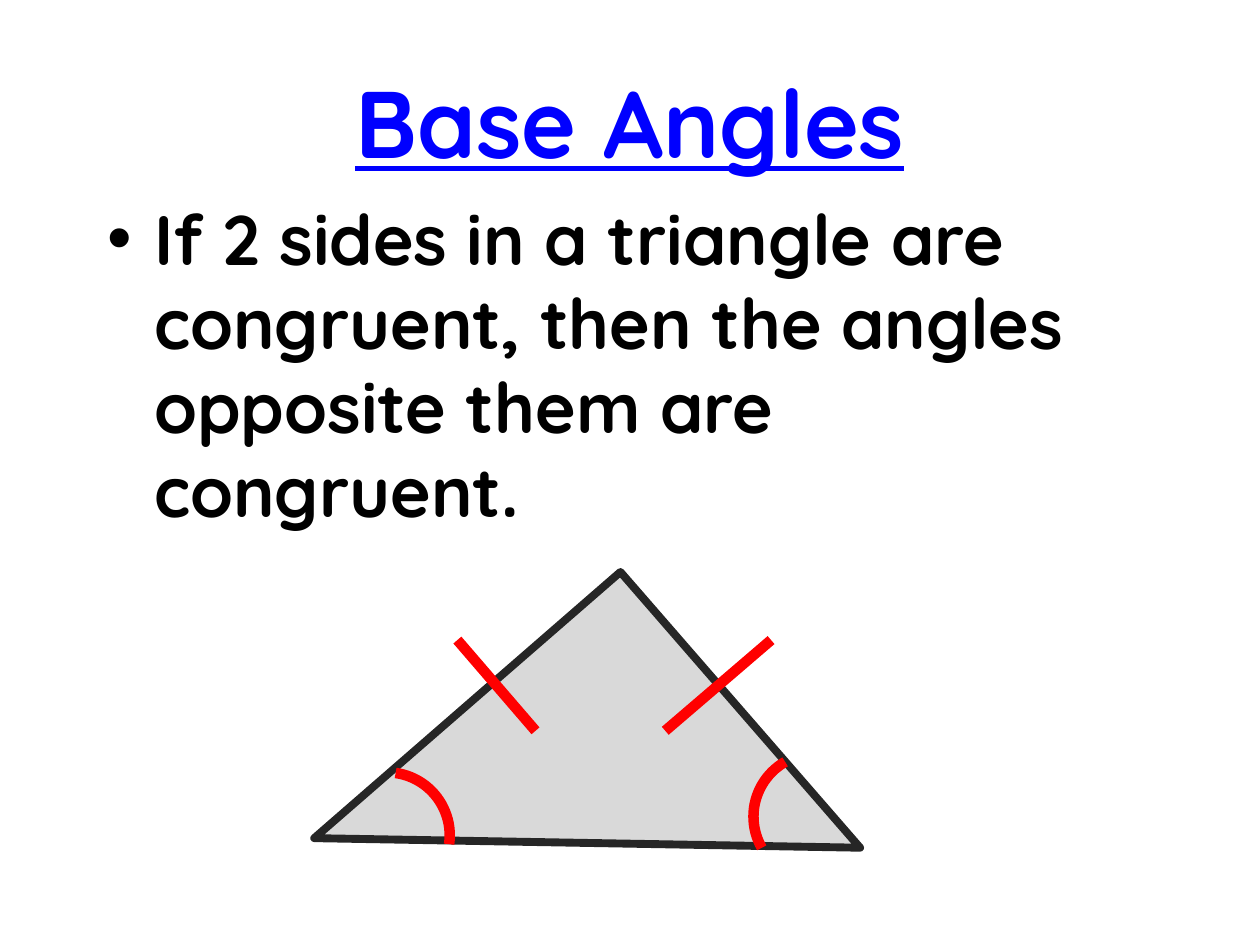
from lxml import etree
from pptx import Presentation
from pptx.dml.color import RGBColor
from pptx.enum.shapes import MSO_CONNECTOR, MSO_SHAPE
from pptx.enum.text import MSO_ANCHOR, MSO_AUTO_SIZE, PP_ALIGN
from pptx.oxml.ns import qn
from pptx.util import Inches, Pt

ARC = MSO_SHAPE.ARC
WEDGE = MSO_SHAPE.RIGHT_TRIANGLE
LINE = MSO_CONNECTOR.STRAIGHT
MIDDLE, TOP = MSO_ANCHOR.MIDDLE, MSO_ANCHOR.TOP
CENTER, LEFT = PP_ALIGN.CENTER, PP_ALIGN.LEFT
FIXED = MSO_AUTO_SIZE.NONE

COLORS = {"title": "0000FF", "body": "000000", "fill": "D9D9D9",
          "edge": "262626", "mark": "FF0000"}
FONT = "Quicksand"
COLS, ROWS = 100, 75
TITLE = {"size": Pt(54), "bold": True, "underline": True, "name": FONT}
BODY = {"size": Pt(40), "bold": True, "name": FONT}


class Board:
    """Draws styled elements on one slide, placed by columns and rows."""

    def __init__(self, deck):
        self.col = deck.slide_width / COLS
        self.row = deck.slide_height / ROWS
        self.slide = deck.slides.add_slide(deck.slide_layouts[1])

    def spot(self, x, y):
        return round(x * self.col), round(y * self.row)

    def color(self, name):
        return RGBColor.from_string(COLORS[name])

    def stroke(self, item, name, width):
        item.line.color.rgb = self.color(name)
        item.line.width = Pt(width)

    def text(self, index, box, words, look, name, anchor, align):
        hold = self.slide.placeholders[index]
        hold.left, hold.top = self.spot(*box[:2])
        hold.width, hold.height = self.spot(*box[2:])
        frame = hold.text_frame
        frame.auto_size, frame.vertical_anchor = FIXED, anchor
        para = frame.paragraphs[0]
        para.alignment = align
        run = para.add_run()
        run.text = words
        for key, value in look.items():
            setattr(run.font, key, value)
        run.font.color.rgb = self.color(name)

    def shape(self, kind, box, turn, edge, width, fill=None):
        item = self.slide.shapes.add_shape(
            kind, *self.spot(*box[:2]), *self.spot(*box[2:]))
        item.rotation = turn
        item.shadow.inherit = False
        if fill:
            item.fill.solid()
            item.fill.fore_color.rgb = self.color(fill)
        else:
            item.fill.background()
        self.stroke(item, edge, width)

    def tick(self, start, end):
        item = self.slide.shapes.add_connector(
            LINE, *self.spot(*start), *self.spot(*end))
        self.stroke(item, "mark", 6)
        etree.SubElement(item._element.spPr, qn("a:effectLst"))


def main():
    deck = Presentation()
    deck.slide_width, deck.slide_height = Inches(10), Inches(7.5)
    board = Board(deck)
    board.shape(WEDGE, (30.5, 52.4, 32.2, 29), 139, "edge", 4.5, "fill")
    board.text(0, (0, 0, 100, 19.2), "Base Angles",
               TITLE, "title", MIDDLE, CENTER)
    board.text(1, (7.5, 15, 85, 29.2),
               "If 2 sides in a triangle are congruent, "
               "then the angles opposite them are congruent.",
               BODY, "body", TOP, LEFT)
    for x, y, turn in ((59.8, 59.8, 240.2), (25.7, 61.3, 8.1)):
        board.shape(ARC, (x, y, 10, 10), turn, "mark", 6)
    for start, end in ((36.3, 42.5), (61.2, 52.8)):
        board.tick((start, 50.8), (end, 58))
    deck.save("out.pptx")


if __name__ == "__main__":
    main()
